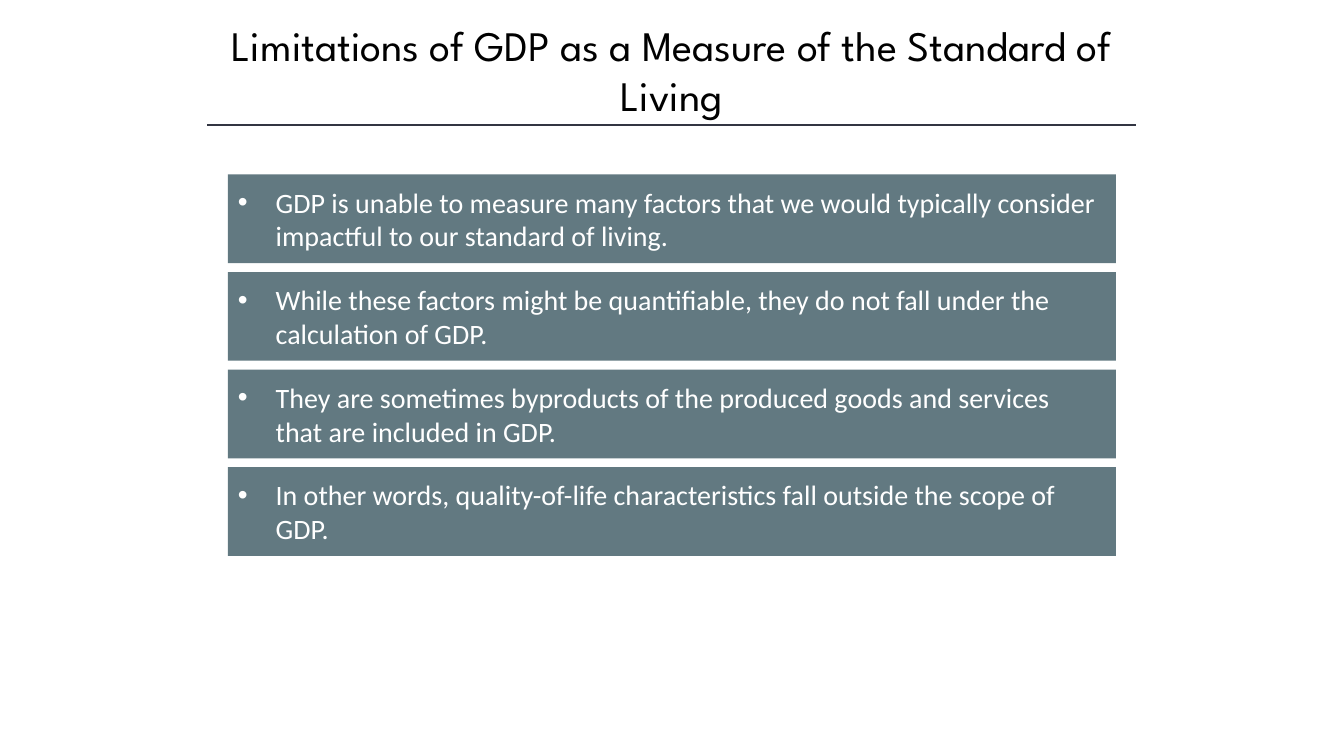
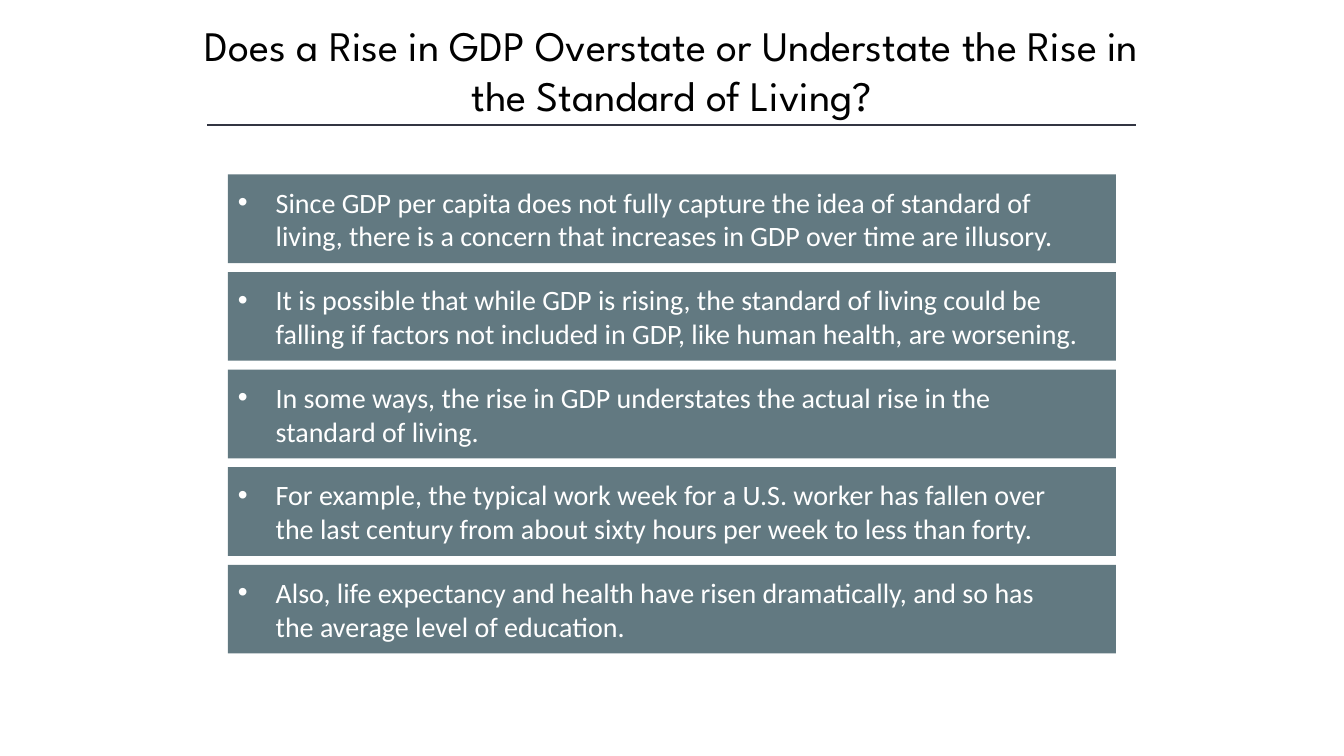
from dataclasses import dataclass

from lxml.etree import SubElement
from pptx import Presentation
from pptx.dml.color import RGBColor
from pptx.enum.shapes import MSO_CONNECTOR, MSO_SHAPE
from pptx.enum.text import MSO_ANCHOR, MSO_AUTO_SIZE, PP_ALIGN
from pptx.oxml.ns import qn
from pptx.util import Pt


@dataclass(frozen=True)
class Theme:
    title_color: RGBColor = RGBColor(0x00, 0x00, 0x00)
    rule_color: RGBColor = RGBColor(0x32, 0x35, 0x42)
    bar_color: RGBColor = RGBColor(0x62, 0x79, 0x81)
    bar_text_color: RGBColor = RGBColor(0xFF, 0xFF, 0xFF)
    title_font: str = "League Spartan"
    body_font: str = "Calibri"
    title_size: int = 30
    body_size: int = 20
    rule_width: int = 1


@dataclass(frozen=True)
class Box:
    left: float
    top: float
    width: float
    height: float

    def lengths(self):
        return Pt(self.left), Pt(self.top), Pt(self.width), Pt(self.height)


THEME = Theme()
PAGE_WIDTH, PAGE_HEIGHT = 960, 540
TITLE_ONLY_LAYOUT = 5

HEADER = Box(120, 10, 720, 79.3)
RULE_INSET = 28.2
BARS = Box(162.8, 124.6, 634.3, 342.2)
BAR_HEIGHT = 63.4
BAR_PITCH = 69.7
BULLET_INDENT = 27
TEXT_INSET = 7.2
FIRST_RIGHT_INSET = 14.4
RIGHT_INSET = 26.6

SLIDES = [
    ("Limitations of GDP as a Measure of the Standard of Living", [
        "GDP is unable to measure many factors that we would typically consider "
        "impactful to our standard of living.",
        "While these factors might be quantifiable, they do not fall under the "
        "calculation of GDP.",
        "They are sometimes byproducts of the produced goods and services that "
        "are included in GDP.",
        "In other words, quality-of-life characteristics fall outside the scope "
        "of GDP.",
    ]),
    ("Does a Rise in GDP Overstate or Understate the Rise in the Standard of Living?", [
        "Since GDP per capita does not fully capture the idea of standard of "
        "living, there is a concern that increases in GDP over time are illusory.",
        "It is possible that while GDP is rising, the standard of living could be "
        "falling if factors not included in GDP, like human health, are worsening.",
        "In some ways, the rise in GDP understates the actual rise in the "
        "standard of living.",
        "For example, the typical work week for a U.S. worker has fallen over the "
        "last century from about sixty hours per week to less than forty.",
        "Also, life expectancy and health have risen dramatically, and so has the "
        "average level of education.",
    ]),
]


def format_text(paragraph, font_name, size, color, alignment):
    paragraph.alignment = alignment
    for span in paragraph.runs:
        span.font.name = font_name
        span.font.size = Pt(size)
        span.font.color.rgb = color


def add_bullet(paragraph, indent):
    properties = paragraph._p.get_or_add_pPr()
    properties.set("marL", str(Pt(indent)))
    properties.set("indent", str(-Pt(indent)))
    SubElement(properties, qn("a:buFont"), typeface="Arial")
    SubElement(properties, qn("a:buChar"), char="•")


def add_header(page, text, box):
    # Title
    title = page.shapes.title
    title.left, title.top, title.width, title.height = box.lengths()
    frame = title.text_frame
    frame.text = text
    frame.word_wrap = True
    frame.auto_size = MSO_AUTO_SIZE.NONE
    frame.vertical_anchor = MSO_ANCHOR.TOP
    format_text(frame.paragraphs[0], THEME.title_font, THEME.title_size,
                THEME.title_color, PP_ALIGN.CENTER)

    # Rule along the foot of the header
    foot = Pt(box.top + box.height)
    rule = page.shapes.add_connector(
        MSO_CONNECTOR.STRAIGHT, Pt(box.left + RULE_INSET), foot,
        Pt(box.left + box.width - RULE_INSET), foot)
    rule.line.color.rgb = THEME.rule_color
    rule.line.width = Pt(THEME.rule_width)
    SubElement(rule._element.spPr, qn("a:effectLst"))


def add_bar(page, text, box, right_inset):
    bar = page.shapes.add_shape(MSO_SHAPE.RECTANGLE, *box.lengths())
    bar.shadow.inherit = False
    bar.fill.solid()
    bar.fill.fore_color.rgb = THEME.bar_color
    bar.line.fill.background()

    frame = bar.text_frame
    frame.text = text
    frame.word_wrap = True
    frame.vertical_anchor = MSO_ANCHOR.MIDDLE
    frame.margin_left = Pt(TEXT_INSET)
    frame.margin_right = Pt(right_inset)
    paragraph = frame.paragraphs[0]
    format_text(paragraph, THEME.body_font, THEME.body_size,
                THEME.bar_text_color, PP_ALIGN.LEFT)
    add_bullet(paragraph, BULLET_INDENT)


def add_bars(page, points, box):
    for index, text in enumerate(points):
        bar_box = Box(box.left, box.top + index * BAR_PITCH, box.width, BAR_HEIGHT)
        add_bar(page, text, bar_box, RIGHT_INSET if index else FIRST_RIGHT_INSET)


def add_point_slide(deck, title, points):
    page = deck.slides.add_slide(deck.slide_layouts[TITLE_ONLY_LAYOUT])
    add_header(page, title, HEADER)
    add_bars(page, points, BARS)


def main():
    deck = Presentation()
    deck.slide_width, deck.slide_height = Pt(PAGE_WIDTH), Pt(PAGE_HEIGHT)
    for title, points in SLIDES:
        add_point_slide(deck, title, points)
    deck.save("out.pptx")


if __name__ == "__main__":
    main()
